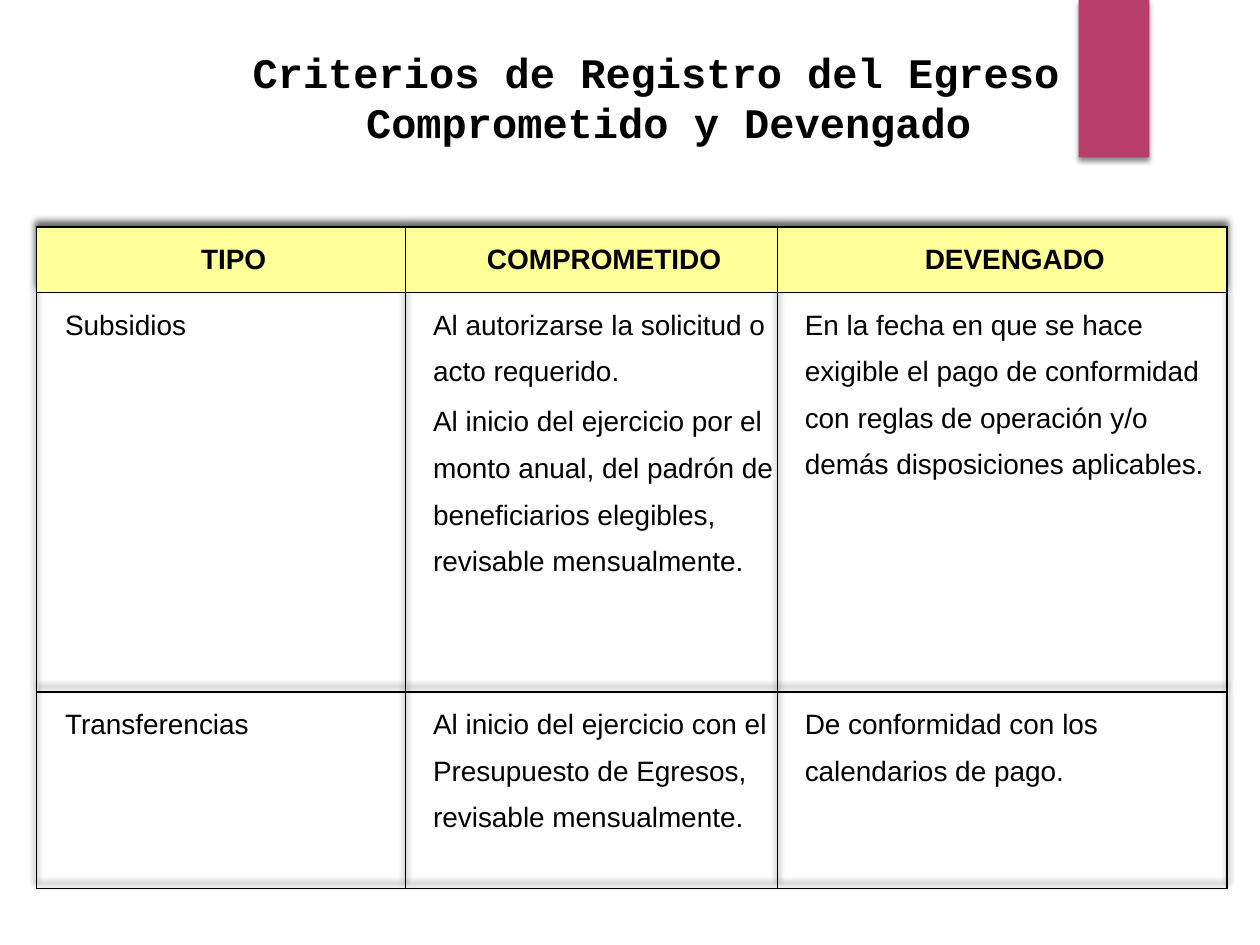
from lxml import etree
from pptx import Presentation
from pptx.dml.color import RGBColor
from pptx.enum.shapes import MSO_SHAPE
from pptx.enum.text import PP_ALIGN
from pptx.oxml.ns import qn
from pptx.util import Pt

RECT = MSO_SHAPE.RECTANGLE
LEFT, CENTER = PP_ALIGN.LEFT, PP_ALIGN.CENTER
BLACK, PINK, YELLOW = "000000", "B83D68", "FFFF99"
TITLE = ["Criterios de Registro del Egreso ", "Comprometido y Devengado"]
COLS = [211, 212.4, 257]
ROWS = [37.4, 228.2, 112.4]
CELLS = [
    [["TIPO"], ["COMPROMETIDO"], ["DEVENGADO"]],
    [["Subsidios"],
     ["Al autorizarse la solicitud o acto requerido.",
      "Al inicio del ejercicio por el monto anual, del padrón de "
      "beneficiarios elegibles, revisable mensualmente."],
     ["En la fecha en que se hace exigible el pago de conformidad con reglas "
      "de operación y/o demás disposiciones aplicables."]],
    [["Transferencias"],
     ["Al inicio del ejercicio con el Presupuesto de Egresos, "
      "revisable mensualmente."],
     ["De conformidad con los calendarios de pago."]],
]


def rgb(color):
    return RGBColor.from_string(color)


def set_attrs(obj, values):
    for name, value in values.items():
        setattr(obj, name, value)


def add_color(parent, color):
    fill = etree.SubElement(parent, qn("a:solidFill"))
    return etree.SubElement(fill, qn("a:srgbClr"), val=color)


def add_shadow(effects, blur, dist, degrees, alpha):
    shadow = etree.SubElement(
        effects, qn("a:outerShdw"), blurRad=str(Pt(blur)), dist=str(Pt(dist)),
        dir=str(degrees * 60000), rotWithShape="0")
    clr = etree.SubElement(shadow, qn("a:srgbClr"), val=BLACK)
    etree.SubElement(clr, qn("a:alpha"), val=str(alpha * 1000))


def write(tf, texts, para, font, indent=None):
    for i, text in enumerate(texts):
        p = tf.paragraphs[0] if i == 0 else tf.add_paragraph()
        r = p.add_run()
        r.text = text
        set_attrs(p, para)
        if i and indent:
            p.space_before = Pt(1)
        if indent:
            pPr = p._p.get_or_add_pPr()
            pPr.set("marL", str(Pt(indent[0])))
            pPr.set("indent", str(Pt(indent[1])))
        set_attrs(r.font, font)
        r.font.color.rgb = rgb(BLACK)


def add_band(s):
    sp = s.shapes.add_shape(RECT, Pt(616.4), Pt(0), Pt(40.4), Pt(90))
    sp.fill.solid()
    sp.fill.fore_color.rgb = rgb(PINK)
    sp.line.fill.background()
    sp.shadow.inherit = False
    add_shadow(sp._element.spPr.find(qn("a:effectLst")), 3, 2, 90, 45)


def add_title(s):
    sp = s.shapes.add_textbox(Pt(113), Pt(23), Pt(538), Pt(65.5))
    sp.text_frame.word_wrap = True
    write(sp.text_frame, TITLE, {"alignment": CENTER},
          {"name": "Courier New", "size": Pt(24), "bold": True})


def style_cell(cell, header):
    set_attrs(cell, {"margin_left": Pt(2), "margin_right": Pt(2),
                     "margin_top": Pt(1), "margin_bottom": Pt(0)})
    tcPr = cell._tc.get_or_add_tcPr()
    for side in ("lnL", "lnR", "lnT", "lnB"):
        ln = etree.SubElement(tcPr, qn(f"a:{side}"), w=str(Pt(1)))
        add_color(ln, BLACK)
    if header:
        cell.fill.solid()
        cell.fill.fore_color.rgb = rgb(YELLOW)
    else:
        cell.fill.background()


def add_criteria_table(s):
    frame = s.shapes.add_table(len(ROWS), len(COLS), Pt(20.8), Pt(129.8),
                               Pt(sum(COLS)), Pt(sum(ROWS)))
    table = frame.table
    set_attrs(table, {"first_row": False, "horz_banding": False})
    effects = etree.Element(qn("a:effectLst"))
    add_shadow(effects, 4, 3, 270, 60)
    table._tbl.tblPr.insert(0, effects)
    for col, width in zip(table.columns, COLS):
        col.width = Pt(width)
    for row, height in zip(table.rows, ROWS):
        row.height = Pt(height)
    for i, texts in enumerate(CELLS):
        for j, text in enumerate(texts):
            cell = table.cell(i, j)
            header = i == 0
            style_cell(cell, header)
            para = {"alignment": CENTER if header else LEFT,
                    "line_spacing": 1.5, "space_after": Pt(1)}
            font = {"name": "Arial", "size": Pt(16), "bold": header}
            indent = (0, 14.4) if header or j == 0 else (13.7, 0)
            write(cell.text_frame, text, para, font, indent)


def main():
    prs = Presentation()
    prs.slide_width, prs.slide_height = Pt(720), Pt(540)
    s = prs.slides.add_slide(prs.slide_layouts[6])
    add_band(s)
    add_criteria_table(s)
    add_title(s)
    prs.save("out.pptx")


if __name__ == "__main__":
    main()
